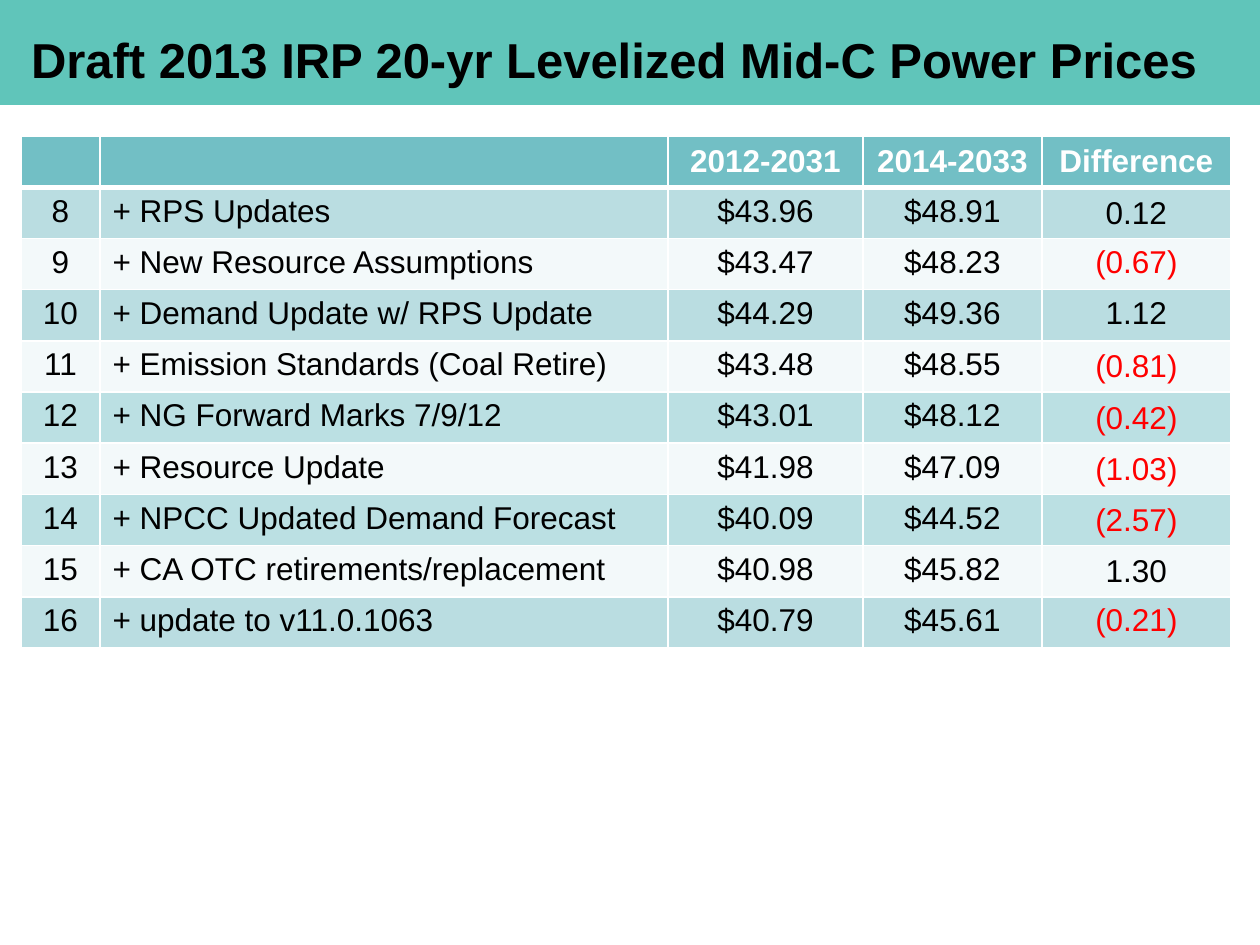
"""Build the slide of levelized Mid-C power prices, with one table row per update step."""
import dataclasses
import typing

import lxml.etree
import pptx
import pptx.dml.color
import pptx.enum.shapes
import pptx.enum.text
import pptx.oxml.ns
import pptx.util

PX_PER_INCH = 126
FONT = "Arial"
COLORS = {
    "band": "60C5BA",
    "header": "72BFC5",
    "teal": "BADDE1",
    "aqua": "BBE0E3",
    "pale": "F3F9FA",
    "white": "FFFFFF",
    "text": "000000",
    "negative": "FF0000",
}
COLUMN_WIDTHS = (79, 568, 195, 179, 189)
TABLE_HEIGHT = 512
HEADINGS = ("", "", "2012-2031", "2014-2033", "Difference")
CENTER = pptx.enum.text.PP_ALIGN.CENTER
LEFT = pptx.enum.text.PP_ALIGN.LEFT
MIDDLE = pptx.enum.text.MSO_ANCHOR.MIDDLE


@dataclasses.dataclass(frozen=True)
class PriceStep:
    number: str
    update: str
    early_price: str
    late_price: str
    difference: str
    fill: str
    tight: bool = True


STEPS = (
    PriceStep("8", "+ RPS Updates", "$43.96", "$48.91", "0.12", "teal"),
    PriceStep("9", "+ New Resource Assumptions", "$43.47", "$48.23", "(0.67)", "pale", False),
    PriceStep("10", "+ Demand Update w/ RPS Update", "$44.29", "$49.36", "1.12", "teal", False),
    PriceStep("11", "+ Emission Standards (Coal Retire)", "$43.48", "$48.55", "(0.81)", "pale"),
    PriceStep("12", "+ NG Forward Marks 7/9/12", "$43.01", "$48.12", "(0.42)", "aqua"),
    PriceStep("13", "+ Resource Update", "$41.98", "$47.09", "(1.03)", "pale"),
    PriceStep("14", "+ NPCC Updated Demand Forecast", "$40.09", "$44.52", "(2.57)", "aqua"),
    PriceStep("15", "+ CA OTC retirements/replacement", "$40.98", "$45.82", "1.30", "pale"),
    PriceStep("16", "+ update to v11.0.1063", "$40.79", "$45.61", "(0.21)", "teal", False),
)


def px(length: int) -> int:
    """Turn whole pixels into EMU."""
    return round(length * pptx.util.Inches(1) / PX_PER_INCH)


def rgb(name: str) -> pptx.dml.color.RGBColor:
    """Look up a named colour."""
    return pptx.dml.color.RGBColor.from_string(COLORS[name])


def set_font(paragraph: typing.Any, size: int, color: str, bold: bool) -> None:
    """Format a whole paragraph."""
    paragraph.font.name = FONT
    paragraph.font.size = pptx.util.Pt(size)
    paragraph.font.bold = bold
    paragraph.font.color.rgb = rgb(color)


def set_borders(cell: typing.Any, top: int, bottom: int) -> None:
    """Give a cell white borders with the given top and bottom widths in points."""
    qn = pptx.oxml.ns.qn
    properties = cell._tc.get_or_add_tcPr()
    for side, width in (("L", 1), ("R", 1), ("T", top), ("B", bottom)):
        border = lxml.etree.SubElement(properties, qn(f"a:ln{side}"), w=str(pptx.util.Pt(width)))
        solid = lxml.etree.SubElement(border, qn("a:solidFill"))
        lxml.etree.SubElement(solid, qn("a:srgbClr"), val=COLORS["white"])


def fill_cell(cell: typing.Any, text: str, fill: str, color: str,
              bold: bool = False, align: typing.Any = CENTER) -> None:
    """Write and colour one table cell."""
    cell.fill.solid()
    cell.fill.fore_color.rgb = rgb(fill)
    cell.text = text
    paragraph = cell.text_frame.paragraphs[0]
    paragraph.alignment = align
    set_font(paragraph, 18, color, bold)


def add_band(slide: typing.Any) -> None:
    """Put the coloured band behind the title."""
    band = slide.shapes.add_shape(
        pptx.enum.shapes.MSO_SHAPE.RECTANGLE, 0, 0, px(1260), px(105))
    band.shadow.inherit = False
    band.fill.solid()
    band.fill.fore_color.rgb = rgb("band")
    band.line.fill.background()
    slide.shapes.title.element.addprevious(band.element)


def format_title(title: typing.Any) -> None:
    """Place and write the slide title."""
    title.left, title.top, title.width, title.height = map(px, (21, 23, 1207, 72))
    frame = title.text_frame
    frame.text = "Draft 2013 IRP 20-yr Levelized Mid-C Power Prices"
    frame.word_wrap = True
    frame.auto_size = pptx.enum.text.MSO_AUTO_SIZE.NONE
    frame.vertical_anchor = MIDDLE
    frame.margin_left = frame.margin_right = px(10)
    frame.margin_top = frame.margin_bottom = px(5)
    frame.paragraphs[0].alignment = LEFT
    set_font(frame.paragraphs[0], 28, "text", True)


def add_prices(slide: typing.Any) -> None:
    """Draw the price table."""
    prices = slide.shapes.add_table(
        len(STEPS) + 1, len(HEADINGS), px(21), px(136),
        px(sum(COLUMN_WIDTHS)), px(TABLE_HEIGHT)).table
    for column, width in zip(prices.columns, COLUMN_WIDTHS):
        column.width = px(width)
    for column, heading in enumerate(HEADINGS):
        cell = prices.cell(0, column)
        set_borders(cell, 1, 3)
        fill_cell(cell, heading, "header", "white", bold=True)
        cell.vertical_anchor = MIDDLE
    for row, step in enumerate(STEPS, start=1):
        values = (step.number, step.update, step.early_price, step.late_price, step.difference)
        for column, value in enumerate(values):
            cell = prices.cell(row, column)
            set_borders(cell, 3 if row == 1 else 1, 1)
            color = "negative" if value.startswith("(") else "text"
            fill_cell(cell, value, step.fill, color, align=LEFT if column == 1 else CENTER)
        if step.tight:
            difference = prices.cell(row, len(values) - 1)
            difference.vertical_anchor = MIDDLE
            difference.margin_left = difference.margin_right = difference.margin_top = px(1)
            difference.margin_bottom = 0


def main() -> None:
    """Build and save the presentation."""
    presentation = pptx.Presentation()
    presentation.slide_width, presentation.slide_height = px(1260), px(945)
    slide = presentation.slides.add_slide(presentation.slide_layouts[5])
    format_title(slide.shapes.title)
    add_band(slide)
    add_prices(slide)
    presentation.save("out.pptx")


if __name__ == "__main__":
    main()
